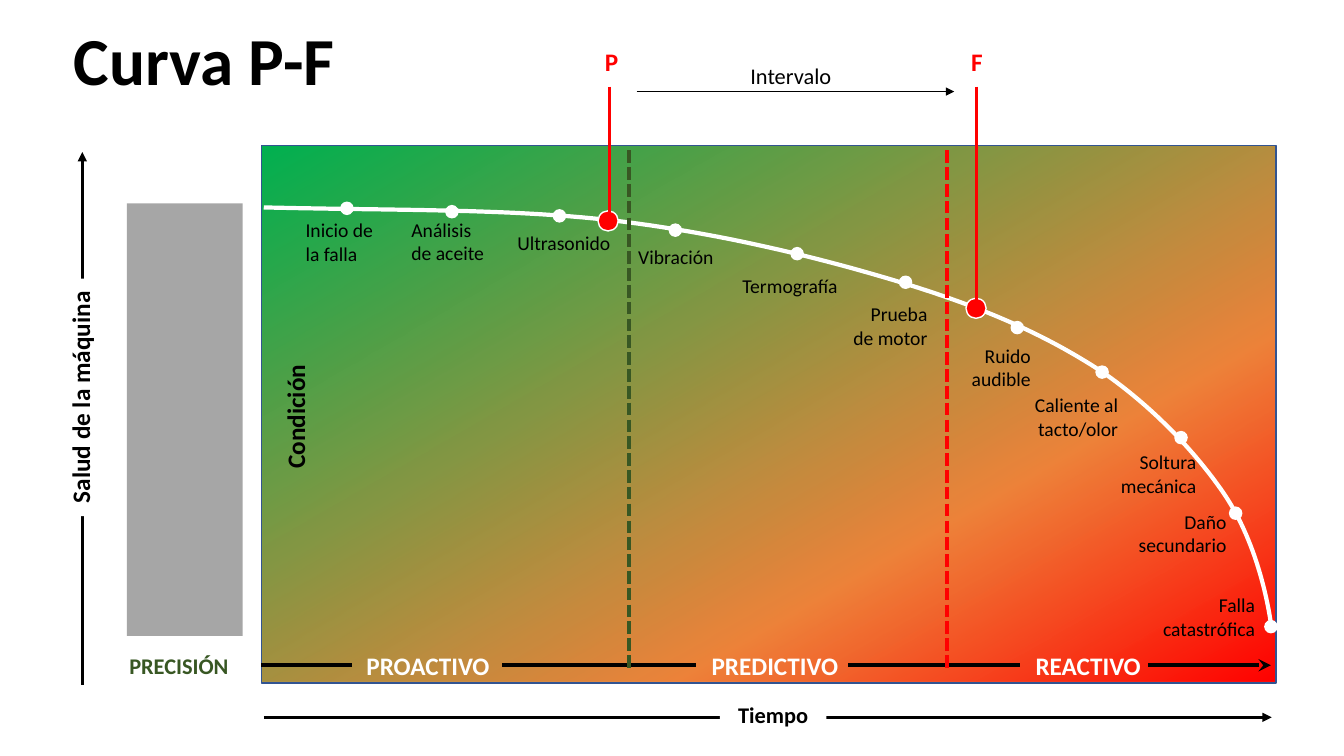
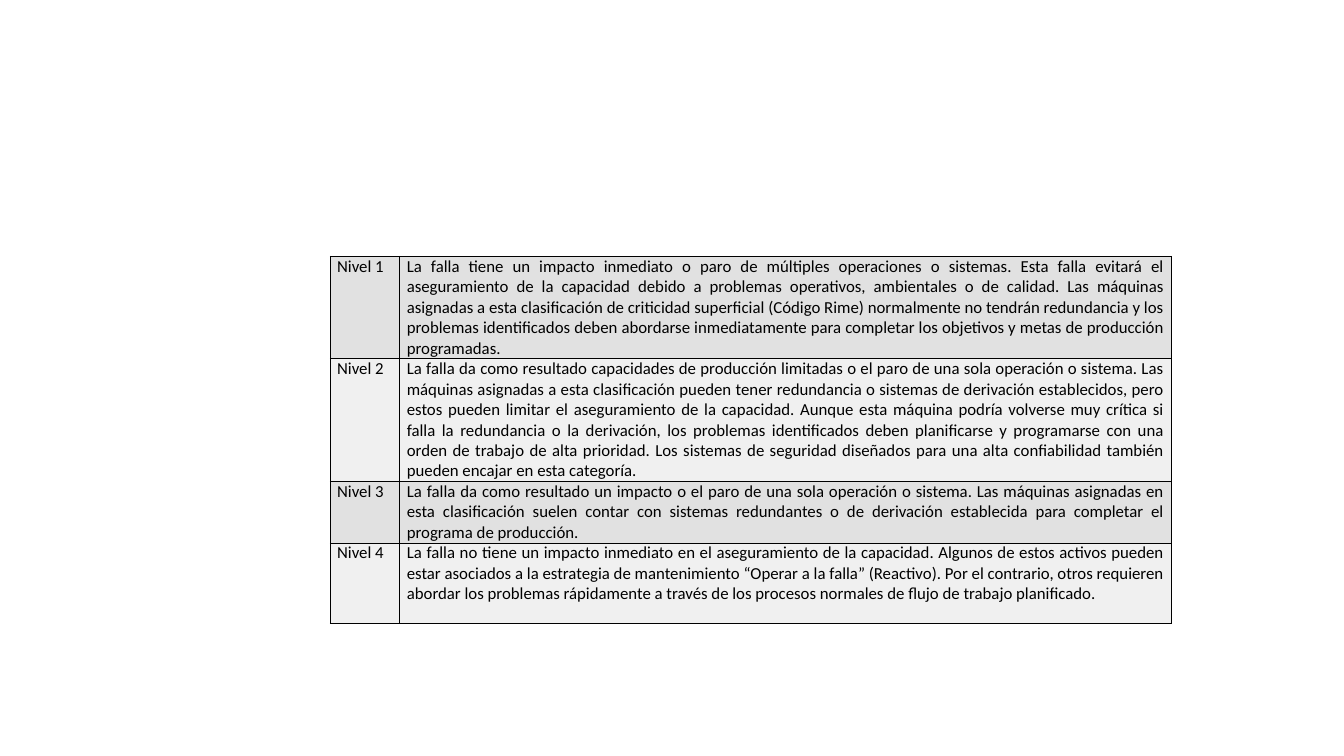
from lxml import etree
from pptx import Presentation
from pptx import util as u
from pptx.dml.color import RGBColor
from pptx.enum import dml, shapes, text
from pptx.oxml.ns import qn

HUES = {
    "ink": "000000", "paper": "FFFFFF", "red": "FF0000", "green": "00B050",
    "orange": "ED7D31", "moss": "385723", "gray": "A6A6A6", "edge": "325491",
    "dark": "E1E1E1", "light": "F0F0F0",
}
FONT = "Calibri"
COLS, ROWS = 160, 90  # square cells
WIDE, HIGH = u.Inches(13.333), u.Inches(7.5)
ALIGN = {"l": text.PP_ALIGN.LEFT, "c": text.PP_ALIGN.CENTER,
         "r": text.PP_ALIGN.RIGHT, "j": text.PP_ALIGN.JUSTIFY}


def hue(name):
    return RGBColor.from_string(HUES[name])


def col(n):
    return u.Emu(round(WIDE * n / COLS))


def row(n):
    return u.Emu(round(HIGH * n / ROWS))


def add(node, tag, **attrs):
    return etree.SubElement(node, qn(tag), attrs)


def bezier(start, curves, steps=24):
    """Points along a chain of cubic curves."""
    dots = [start]
    for a, b, end in curves:
        for i in range(1, steps + 1):
            t = i / steps
            s = 1 - t
            dots.append(tuple(
                s**3 * p + 3 * s * s * t * q + 3 * s * t * t * r + t**3 * e
                for p, q, r, e in zip(start, a, b, end)))
        start = end
    return dots


class Deck:
    def __init__(self):
        self.prs = Presentation()
        self.prs.slide_width, self.prs.slide_height = WIDE, HIGH
        self.slide = None

    def page(self):
        self.slide = self.prs.slides.add_slide(self.prs.slide_layouts[6])

    def style(self, para, size, ink="ink", bold=False, align="l"):
        para.alignment = ALIGN[align]
        font = para.font
        font.name, font.size, font.bold = FONT, u.Pt(size), bold
        font.color.rgb = hue(ink)

    def label(self, words, x, y, w, h, size, ink="ink", bold=False,
              align="c", fill=None, turn=0):
        box = self.slide.shapes.add_textbox(col(x), row(y), col(w), row(h))
        box.rotation = turn
        if fill:
            box.fill.solid()
            box.fill.fore_color.rgb = hue(fill)
        frame = box.text_frame
        frame.word_wrap = True
        frame.auto_size = text.MSO_AUTO_SIZE.SHAPE_TO_FIT_TEXT
        frame.text = words
        self.style(frame.paragraphs[0], size, ink, bold, align)

    def paint(self, shape, fill, line=None, width=1):
        shape.shadow.inherit = False
        if fill:
            shape.fill.solid()
            shape.fill.fore_color.rgb = hue(fill)
        else:
            shape.fill.background()
        if line:
            shape.line.color.rgb = hue(line)
            shape.line.width = u.Pt(width)
        else:
            shape.line.fill.background()

    def block(self, x, y, w, h, fill, line=None):
        box = self.slide.shapes.add_shape(
            shapes.MSO_SHAPE.RECTANGLE, col(x), row(y), col(w), row(h))
        self.paint(box, fill, line)
        return box

    def blend(self, box, angle, stops):
        box.fill.gradient()
        box.fill.gradient_angle = 360 - angle
        stack = box._element.spPr.find(qn("a:gradFill")).find(qn("a:gsLst"))
        stack.clear()
        for place, name, alpha in stops:
            stop = add(stack, "a:gs", pos=str(place * 1000))
            tone = add(stop, "a:srgbClr", val=HUES[name])
            if alpha < 100:
                add(tone, "a:alpha", val=str(alpha * 1000))

    def dot(self, x, y, size, fill):
        disc = self.slide.shapes.add_shape(
            shapes.MSO_SHAPE.OVAL, col(x - size / 2), row(y - size / 2),
            col(size), row(size))
        self.paint(disc, fill, "paper")

    def curve(self, points, ink, width):
        pts = [(col(x), row(y)) for x, y in points]
        pen = self.slide.shapes.build_freeform(*pts[0])
        pen.add_line_segments(pts[1:], close=False)
        self.paint(pen.convert_to_shape(), None, ink, width)

    def line(self, x1, y1, x2, y2, width, ink="ink", head=None, dash=False):
        rule = self.slide.shapes.add_connector(
            shapes.MSO_CONNECTOR.STRAIGHT, col(x1), row(y1), col(x2), row(y2))
        rule.line.color.rgb = hue(ink)
        rule.line.width = u.Pt(width)
        if dash:
            rule.line.dash_style = dml.MSO_LINE.SQUARE_DOT
        if head:
            add(rule._element.spPr.find(qn("a:ln")), "a:tailEnd", type=head)
        add(rule._element.spPr, "a:effectLst")

    def border(self, cell, width=0.5):
        props = cell._tc.get_or_add_tcPr()
        for i, side in enumerate("LRTB"):
            edge = etree.Element(qn("a:ln" + side), w=str(int(u.Pt(width))))
            add(add(edge, "a:solidFill"), "a:srgbClr", val=HUES["ink"])
            props.insert(i, edge)

    def table(self, x, y, widths, rows, step):
        """Rows hold the cell texts and, last, the number of text lines."""
        grid = self.slide.shapes.add_table(
            len(rows), len(widths), col(x), row(y), col(sum(widths)),
            row(step * sum(r[-1] for r in rows))).table
        grid.first_row = grid.horz_banding = False
        for c, w in zip(grid.columns, widths):
            c.width = col(w)
        for i, (*words, count) in enumerate(rows):
            grid.rows[i].height = row(step * count)
            for j, word in enumerate(words):
                cell = grid.cell(i, j)
                cell.margin_left = cell.margin_right = u.Inches(0.07)
                cell.margin_top = cell.margin_bottom = 0
                cell.text = word
                self.style(cell.text_frame.paragraphs[0], 12, align="j")
                cell.fill.solid()
                cell.fill.fore_color.rgb = hue("light" if i % 2 else "dark")
                self.border(cell)


# Dot centre, label, label corner and width, text lines, alignment
SIGNS = [
    (41.3, 24.8, "Inicio de la falla", 35.2, 25.4, 10.6, 2, "l"),
    (53.8, 25.2, "Análisis de aceite", 47.8, 25.3, 12, 2, "l"),
    (66.6, 25.7, "Ultrasonido", 60.4, 26.9, 13.8, 1, "l"),
    (80.4, 27.4, "Vibración", 74.8, 28.6, 13.8, 1, "l"),
    (94.9, 30.2, "Termografía", 87.2, 32, 13.8, 1, "l"),
    (107.8, 33.6, "Prueba de motor", 100, 35.4, 11.6, 2, "r"),
    (121.1, 39, "Ruido audible", 112.3, 40.3, 11.6, 2, "r"),
    (131.2, 44.3, "Caliente al tacto/olor", 120.1, 46.2, 14.2, 2, "r"),
    (140.6, 52.1, "Soltura mecánica", 129.4, 53, 14.2, 2, "r"),
    (147.1, 61.1, "Daño secundario", 133, 60.1, 14.2, 2, "r"),
    (151.3, 74.6, "Falla catastrófica", 136.4, 70, 14.2, 2, "r"),
]
BEND = [
    ((48.2, 25.1), (61.2, 24.8), (74.2, 26.4)),
    ((87, 28), (99.2, 31.1), (108.8, 34.1)),
    ((118.3, 37.1), (125.2, 40.3), (131.4, 44.4)),
    ((137.4, 48.6), (142.4, 53.9), (145.8, 58.9)),
    ((149.2, 64), (150.8, 70.4), (151.4, 74.9)),
]
ZONES = [("PROACTIVO", 36.8), ("PREDICTIVO", 78.1), ("REACTIVO", 115.4)]
SPANS = [(31.1, 41.9, None), (59.8, 82.9, None), (101, 121.4, None),
         (136.7, 151.3, "stealth")]
# Letter, its left edge, stem, dot centre
MARKS = [("P", 69.8, 72.6, 72.4, 26.3), ("F", 113.3, 116.2, 116.2, 36.7)]
LEVELS = [
    ("Nivel 1", "La falla tiene un impacto inmediato o paro de múltiples "
     "operaciones o sistemas. Esta falla evitará el aseguramiento de la "
     "capacidad debido a problemas operativos, ambientales o de calidad. Las "
     "máquinas asignadas a esta clasificación de criticidad superficial "
     "(Código Rime) normalmente no tendrán redundancia y los problemas "
     "identificados deben abordarse inmediatamente para completar los "
     "objetivos y metas de producción programadas.", 5),
    ("Nivel 2", "La falla da como resultado capacidades de producción "
     "limitadas o el paro de una sola operación o sistema. Las máquinas "
     "asignadas a esta clasificación pueden tener redundancia o sistemas de "
     "derivación establecidos, pero estos pueden limitar el aseguramiento de "
     "la capacidad. Aunque esta máquina podría volverse muy crítica si falla "
     "la redundancia o la derivación, los problemas identificados deben "
     "planificarse y programarse con una orden de trabajo de alta "
     "prioridad. Los sistemas de seguridad diseñados para una alta "
     "confiabilidad también pueden encajar en esta categoría.", 6),
    ("Nivel 3", "La falla da como resultado un impacto o el paro de una sola "
     "operación o sistema. Las máquinas asignadas en esta clasificación "
     "suelen contar con sistemas redundantes o de derivación establecida "
     "para completar el programa de producción.", 3),
    ("Nivel 4", "La falla no tiene un impacto inmediato en el aseguramiento "
     "de la capacidad. Algunos de estos activos pueden estar asociados a la "
     "estrategia de mantenimiento “Operar a la falla” (Reactivo). Por el "
     "contrario, otros requieren abordar los problemas rápidamente a través "
     "de los procesos normales de flujo de trabajo planificado.", 4),
]


def graph(deck):
    deck.page()
    # Panel and title
    panel = deck.block(31.1, 17.3, 120.8, 64, "green", "edge")
    deck.blend(panel, 60, [(0, "green", 100), (69, "orange", 95),
                           (100, "red", 100)])
    deck.label("Curva P-F", 7.6, 1.6, 44.5, 10.9, 48, bold=True, align="l",
               fill="paper")
    # Panel labels
    deck.label("Condición", 21, 47.2, 28.3, 4.8, 18, bold=True, turn=270)
    deck.label("Intervalo", 80, 6.8, 28.3, 4.4, 16)
    for name, x in ZONES:
        deck.label(name, x, 76.8, 28.3, 4.8, 18, "paper", True)
    for _, _, name, x, y, w, count, side in SIGNS:
        deck.label(name, x, y, w, 1.4 + 2.7 * count, 14, align=side)
    # Precision column
    deck.block(15.1, 24.2, 13.8, 51.5, "gray")
    deck.label("PRECISIÓN", 12.2, 77, 18.2, 4.4, 16, "moss", True,
               fill="paper")
    # Curve and its dots
    deck.curve(bezier((31.4, 24.7), BEND), "paper", 3)
    for x, y, *_ in SIGNS:
        deck.dot(x, y, 1.44, "paper")
    # Axes and arrows
    deck.line(9.8, 81.5, 9.8, 18.1, 2.25, head="triangle")
    deck.line(31.4, 85.4, 151.4, 85.4, 2.25, head="triangle")
    deck.line(75.8, 10.9, 113.6, 10.9, 1, head="triangle")
    for left, right, head in SPANS:
        deck.line(left, 79.2, right, 79.2, 3, head=head)
    # Zone limits
    for x, ink in ((74.9, "moss"), (112.7, "red")):
        deck.line(x, 17.9, x, 79.6, 3, ink, dash=True)
    # Points P and F
    for name, left, stem, x, y in MARKS:
        deck.dot(x, y, 2.4, "red")
        deck.line(stem, 10.3, stem, y, 2.25, "red")
        deck.label(name, left, 4.9, 6, 4.8, 18, "red", True)
    # Axis names
    deck.label("Salud de la máquina", -4.6, 44.9, 28.3, 4.8, 18, bold=True,
               fill="paper", turn=270)
    deck.label("Tiempo", 85.7, 82.9, 12.7, 4.4, 16, bold=True, fill="paper")


def main():
    deck = Deck()
    graph(deck)
    # Criticality levels
    deck.page()
    deck.table(39.3, 30.5, (8.3, 91.9), LEVELS, 2.4)
    deck.prs.save("out.pptx")


if __name__ == "__main__":
    main()
